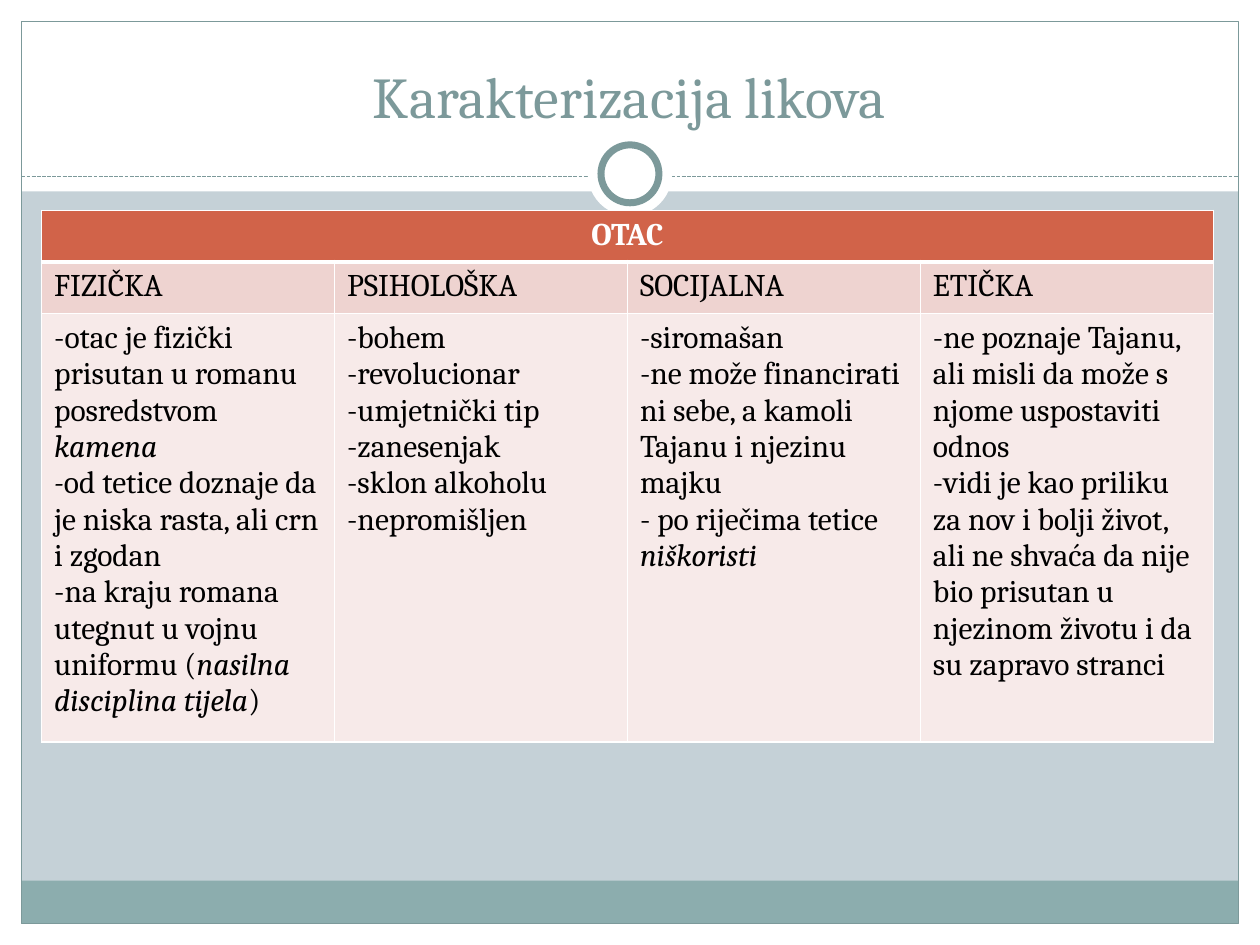
from lxml import etree
from pptx import Presentation
from pptx.dml.color import RGBColor
from pptx.enum.dml import MSO_LINE
from pptx.enum.shapes import MSO_CONNECTOR, MSO_SHAPE
from pptx.enum.text import MSO_ANCHOR, PP_ALIGN
from pptx.oxml.ns import qn
from pptx.util import Inches, Pt

RECTANGLE, OVAL = MSO_SHAPE.RECTANGLE, MSO_SHAPE.OVAL
STRAIGHT = MSO_CONNECTOR.STRAIGHT
DASH = MSO_LINE.SQUARE_DOT
LEFT, CENTER = PP_ALIGN.LEFT, PP_ALIGN.CENTER
TOP, BOTTOM = MSO_ANCHOR.TOP, MSO_ANCHOR.BOTTOM

FONT = "Cambria"
COLORS = {
    "background": "C5D1D7",
    "white": "FFFFFF",
    "black": "000000",
    "accent": "7C999A",
    "footer": "8CADAE",
    "header": "D16349",
    "subheader": "EED3D0",
    "body": "F7EAE9",
}
WIDTH, HEIGHT = 10, 7.5
MARGIN = 0.17
BAND_HEIGHT = 1.52
DIVIDER_Y = 1.4

CHARACTER = "OTAC"
# Asterisks enclose italic text.
TRAITS = {
    "FIZIČKA": [
        "-otac je fizički prisutan u romanu posredstvom *kamena*",
        "*-*od tetice doznaje da je niska rasta, ali crn i zgodan",
        "-na kraju romana utegnut u vojnu uniformu (*nasilna disciplina tijela*)",
    ],
    "PSIHOLOŠKA": [
        "-bohem",
        "-revolucionar",
        "-umjetnički tip",
        "-zanesenjak",
        "-sklon alkoholu",
        "-nepromišljen",
    ],
    "SOCIJALNA": [
        "-siromašan",
        "-ne može financirati ni sebe, a kamoli Tajanu i njezinu majku",
        "- po riječima tetice *niškoristi*",
    ],
    "ETIČKA": [
        "-ne poznaje Tajanu, ali misli da može s njome uspostaviti odnos",
        "-vidi je kao priliku za nov i bolji život, ali ne shvaća da nije bio "
        "prisutan u njezinom životu i da su zapravo stranci",
    ],
}


def rgb(name):
    return RGBColor.from_string(COLORS[name])


def write_text(text_frame, lines, size=18, color="black", bold=False,
               align=LEFT, anchor=TOP):
    """Write one paragraph per line; asterisks switch italics on and off."""
    text_frame.word_wrap = True
    text_frame.vertical_anchor = anchor
    for index, line in enumerate(lines):
        paragraph = text_frame.paragraphs[0] if index == 0 else text_frame.add_paragraph()
        paragraph.alignment = align
        for part, text in enumerate(line.split("*")):
            if not text:
                continue
            run = paragraph.add_run()
            run.text = text
            run.font.name = FONT
            run.font.size = Pt(size)
            run.font.bold = bold
            run.font.italic = part % 2 == 1
            run.font.color.rgb = rgb(color)


def add_box(slide, kind, left, top, width, height, fill=None, line=None, line_width=0.75):
    shape = slide.shapes.add_shape(
        kind, Inches(left), Inches(top), Inches(width), Inches(height))
    shape.shadow.inherit = False
    if fill:
        shape.fill.solid()
        shape.fill.fore_color.rgb = rgb(fill)
    else:
        shape.fill.background()
    if line:
        shape.line.color.rgb = rgb(line)
        shape.line.width = Pt(line_width)
    else:
        shape.line.fill.background()


def add_circle(slide, center_x, center_y, diameter, **style):
    add_box(slide, OVAL, center_x - diameter / 2, center_y - diameter / 2,
            diameter, diameter, **style)


def add_frame(slide, width, height):
    """Draw the white margins, footer band, outline, divider and ring."""
    inner_width = width - 2 * MARGIN
    bottom = height - MARGIN
    for box in ((0, bottom, width, MARGIN),
                (0, 0, width, BAND_HEIGHT),
                (0, 0, MARGIN, height),
                (width - MARGIN, 0, MARGIN, height)):
        add_box(slide, RECTANGLE, *box, fill="white")
    add_box(slide, RECTANGLE, MARGIN, bottom - 0.34, inner_width, 0.34, fill="footer")
    add_box(slide, RECTANGLE, MARGIN, MARGIN, inner_width, height - 2 * MARGIN, line="accent")

    divider = slide.shapes.add_connector(
        STRAIGHT, Inches(MARGIN), Inches(DIVIDER_Y),
        Inches(width - MARGIN), Inches(DIVIDER_Y))
    divider.line.color.rgb = rgb("accent")
    divider.line.width = Pt(0.75)
    divider.line.dash_style = DASH
    etree.SubElement(divider._element.spPr, qn("a:effectLst"))

    ring_y = 1.38
    add_circle(slide, width / 2, ring_y, 0.67, fill="white")
    add_circle(slide, width / 2, ring_y, 0.46, fill="white", line="accent", line_width=4)


def add_title(slide, left, top, width, height):
    box = slide.shapes.add_textbox(Inches(left), Inches(top), Inches(width), Inches(height))
    write_text(box.text_frame, ["Karakterizacija likova"], size=33, color="accent",
               align=CENTER, anchor=BOTTOM)


def set_borders(cell, top=1, bottom=1):
    properties = cell._tc.get_or_add_tcPr()
    widths = {"lnL": 1, "lnR": 1, "lnT": top, "lnB": bottom}
    for index, (side, width) in enumerate(widths.items()):
        border = etree.Element(qn(f"a:{side}"), w=str(Pt(width)))
        fill = etree.SubElement(border, qn("a:solidFill"))
        etree.SubElement(fill, qn("a:srgbClr"), val=COLORS["white"])
        properties.insert(index, border)


def fill_cell(cell, lines, fill, **text_format):
    cell.fill.solid()
    cell.fill.fore_color.rgb = rgb(fill)
    write_text(cell.text_frame, lines, **text_format)


def add_traits_table(slide, left, top, width, height):
    table = slide.shapes.add_table(
        3, len(TRAITS), Inches(left), Inches(top), Inches(width), Inches(height)).table
    label_height = 0.41
    for row, row_height in zip(table.rows, (label_height, label_height,
                                            height - 2 * label_height)):
        row.height = Inches(row_height)

    table.cell(0, 0).merge(table.cell(0, len(TRAITS) - 1))
    fill_cell(table.cell(0, 0), [CHARACTER], "header", color="white", bold=True, align=CENTER)
    for column, (trait, notes) in enumerate(TRAITS.items()):
        table.columns[column].width = Inches(width / len(TRAITS))
        fill_cell(table.cell(1, column), [trait], "subheader")
        fill_cell(table.cell(2, column), notes, "body")
        set_borders(table.cell(0, column), bottom=3)
        set_borders(table.cell(1, column), top=3)
        set_borders(table.cell(2, column))


def main():
    presentation = Presentation()
    presentation.slide_width, presentation.slide_height = Inches(WIDTH), Inches(HEIGHT)
    slide = presentation.slides.add_slide(presentation.slide_layouts[6])
    slide.background.fill.solid()
    slide.background.fill.fore_color.rgb = rgb("background")
    add_frame(slide, WIDTH, HEIGHT)
    add_title(slide, 0.33, 0.25, 9.33, 0.83)
    add_traits_table(slide, 0.33, 1.67, 9.3, 4.21)
    presentation.save("out.pptx")


if __name__ == "__main__":
    main()
